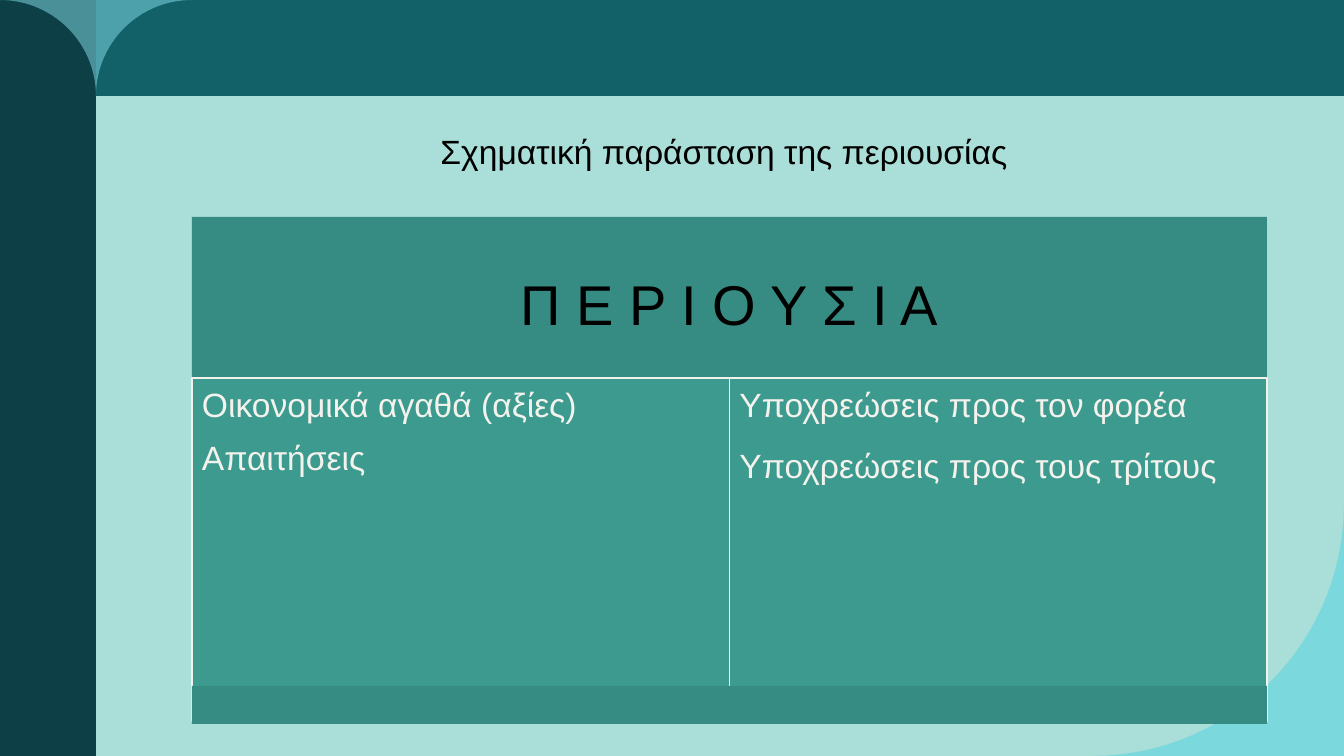
from math import cos, radians, sin

from lxml.etree import SubElement
from pptx import Presentation
from pptx.dml.color import RGBColor
from pptx.enum.shapes import MSO_SHAPE
from pptx.enum.text import MSO_ANCHOR, PP_ALIGN
from pptx.oxml.ns import qn
from pptx.util import Pt

PX = 12192000 / 1344
WIDTH, HEIGHT = 1344, 756
BAND = 96
CORNER = 252

BACKGROUND = RGBColor(0xAA, 0xDE, 0xD8)
TOP_BAND = RGBColor(0x12, 0x61, 0x69)
LEFT_BAND = RGBColor(0x0C, 0x40, 0x46)
TOP_CURVE = RGBColor(0x89, 0xE1, 0xEB)
CORNER_CURVE = RGBColor(0x4E, 0xD3, 0xE1)
HEADER = RGBColor(0x36, 0x8C, 0x82)
PANEL = RGBColor(0x3C, 0x9A, 0x8F)
CREAM = RGBColor(0xF4, 0xF2, 0xEC)
BLACK = RGBColor(0, 0, 0)


def add_box(x, y, w, h, fill, line=None):
    s = slide.shapes.add_shape(MSO_SHAPE.RECTANGLE, *(round(v * PX) for v in (x, y, w, h)))
    s.shadow.inherit = False
    s.fill.solid()
    s.fill.fore_color.rgb = fill
    if line is None:
        s.line.fill.background()
    else:
        s.line.color.rgb = line
        s.line.width = Pt(1)
    return s


def write(tf, lines, size, color, align, margin, gap=0, spacing=1.0):
    """Fill a text frame with one paragraph per line; margin is in px, gap in points."""
    tf.word_wrap = True
    tf.margin_left = tf.margin_right = round(margin * PX)
    tf.margin_top = tf.margin_bottom = round(margin * PX)
    tf.text = "\n".join(lines)
    for p in tf.paragraphs:
        p.alignment = align
        p.line_spacing = spacing
        p.space_after = Pt(gap)
        font = p.runs[0].font
        font.name = "Arial"
        font.size = Pt(size)
        font.color.rgb = color


prs = Presentation()
prs.slide_width = round(WIDTH * PX)
prs.slide_height = round(HEIGHT * PX)
slide = prs.slides.add_slide(prs.slide_layouts[6])
slide.background.fill.solid()
slide.background.fill.fore_color.rgb = BACKGROUND

# Bands and translucent curves
add_box(0, 0, WIDTH, BAND, TOP_BAND)
add_box(0, 0, BAND, HEIGHT, LEFT_BAND)

# Each arc: centre x, centre y, radius, start angle
curves = [
    (TOP_CURVE, [(0, BAND, BAND, -90), (2 * BAND, BAND, BAND, 180)], []),
    (CORNER_CURVE, [(WIDTH - CORNER, HEIGHT - CORNER, CORNER, 0)], [(WIDTH, HEIGHT)]),
]
for color, arcs, corners in curves:
    points = [(cx + r * cos(radians(start + a)), cy + r * sin(radians(start + a)))
              for cx, cy, r, start in arcs for a in range(0, 91, 3)]
    points = [(round(x * PX), round(y * PX)) for x, y in points + corners]
    builder = slide.shapes.build_freeform(*points[0])
    builder.add_line_segments(points[1:], close=True)
    s = builder.convert_to_shape()
    s.shadow.inherit = False
    s.line.fill.background()
    s.fill.solid()
    s.fill.fore_color.rgb = color
    SubElement(s.fill._xPr.find(".//" + qn("a:srgbClr")), qn("a:alpha"), val="50000")

# Property diagram
LEFT, PANEL_W = 192, 537.5
header = add_box(LEFT, 217, 2 * PANEL_W, 180, HEADER)
header.text_frame.vertical_anchor = MSO_ANCHOR.MIDDLE
write(header.text_frame, ["Π Ε Ρ Ι Ο Υ Σ Ι Α"], 40, BLACK, PP_ALIGN.CENTER, 17, spacing=0.9)

panels = [
    (["Οικονομικά αγαθά (αξίες)", "Απαιτήσεις"], 12),
    (["Υποχρεώσεις προς τον φορέα", "Υποχρεώσεις προς τους τρίτους"], 18),
]
for i, (lines, gap) in enumerate(panels):
    panel = add_box(LEFT + i * PANEL_W, 378, PANEL_W, 343, PANEL, CREAM)
    panel.text_frame.vertical_anchor = MSO_ANCHOR.TOP
    write(panel.text_frame, lines, 24, CREAM, PP_ALIGN.LEFT, 10, gap, 0.9)

add_box(LEFT, 686, 2 * PANEL_W, 38, HEADER)

title = slide.shapes.add_textbox(*(round(v * PX) for v in (219, 126, 1010, 50)))
write(title.text_frame, ["Σχηματική παράσταση της περιουσίας"], 24, BLACK, PP_ALIGN.CENTER, 5)

prs.save("out.pptx")
